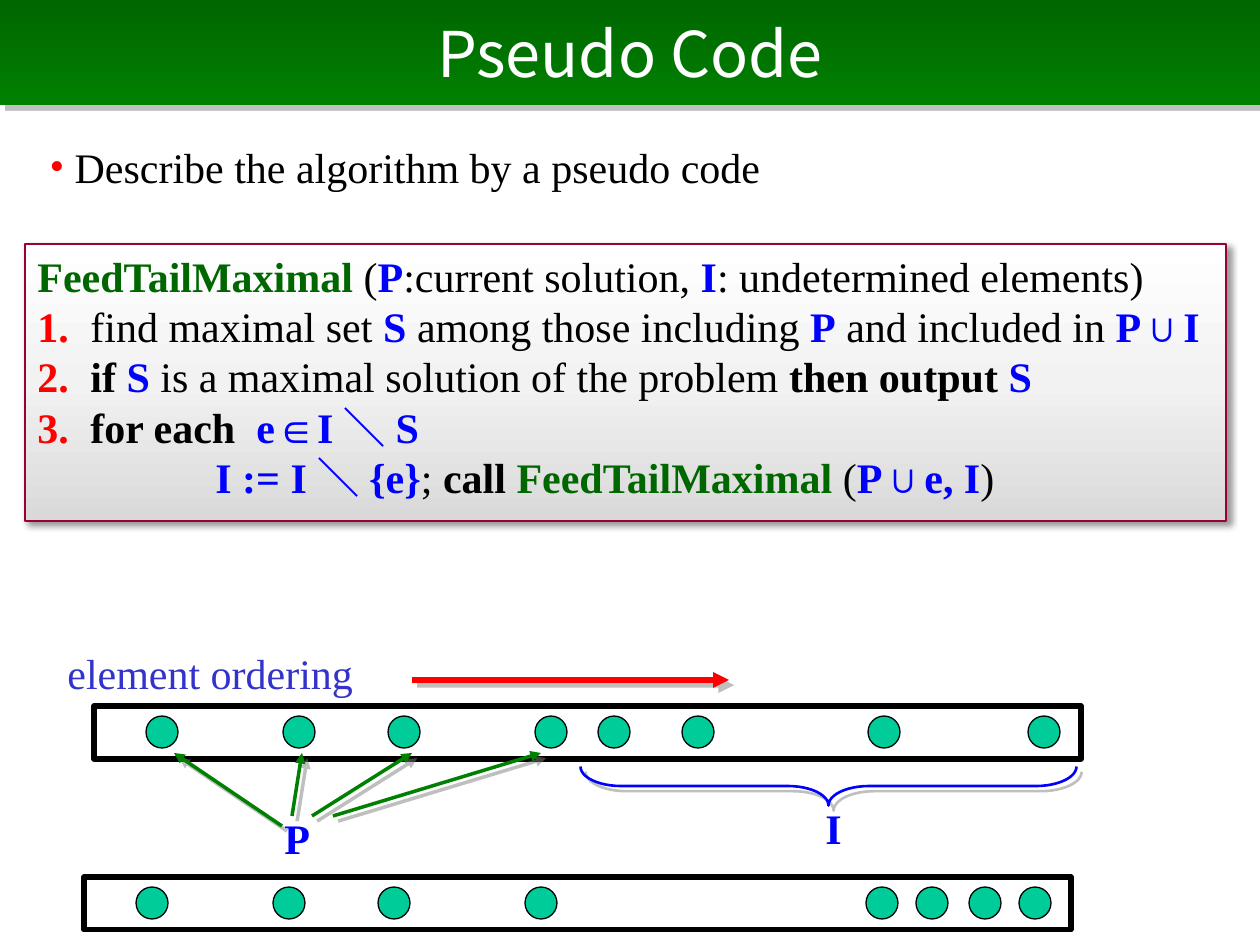
from copy import deepcopy

from lxml import etree
from pptx import Presentation
from pptx.dml.color import RGBColor
from pptx.enum.shapes import MSO_CONNECTOR, MSO_SHAPE
from pptx.enum.text import MSO_ANCHOR, MSO_AUTO_SIZE, PP_ALIGN
from pptx.oxml.ns import qn
from pptx.util import Emu, Pt

RECTANGLE, OVAL, BRACE = MSO_SHAPE.RECTANGLE, MSO_SHAPE.OVAL, MSO_SHAPE.LEFT_BRACE
STRAIGHT = MSO_CONNECTOR.STRAIGHT
TOP, MIDDLE = MSO_ANCHOR.TOP, MSO_ANCHOR.MIDDLE
LEFT, CENTER = PP_ALIGN.LEFT, PP_ALIGN.CENTER
NO_FIT, FIT_SHAPE = MSO_AUTO_SIZE.NONE, MSO_AUTO_SIZE.SHAPE_TO_FIT_TEXT

BLACK = RGBColor(0x00, 0x00, 0x00)
WHITE = RGBColor(0xFF, 0xFF, 0xFF)
PALE_GRAY = RGBColor(0xF2, 0xF2, 0xF2)
LIGHT_GRAY = RGBColor(0xD9, 0xD9, 0xD9)
GRAY = RGBColor(0x80, 0x80, 0x80)
DARK_GREEN = RGBColor(0x00, 0x66, 0x00)
GREEN = RGBColor(0x00, 0x80, 0x00)
TEAL = RGBColor(0x00, 0xCC, 0x99)
RED = RGBColor(0xFF, 0x00, 0x00)
MAROON = RGBColor(0x99, 0x00, 0x33)
BLUE = RGBColor(0x00, 0x00, 0xFF)
INDIGO = RGBColor(0x33, 0x33, 0xCC)

SERIF, SANS = "Times New Roman", "Noto Sans CJK JP"
BAR_WIDTH, BAR_HEIGHT, DOT_SIZE = 987, 53, 32

# Role of a piece of pseudo code: colour, bold
PLAIN, KEYWORD = (BLACK, False), (BLACK, True)
FUNCTION, VARIABLE, NUMBER = (DARK_GREEN, True), (BLUE, True), (RED, True)

# Each line: left margin, first-line indent, pieces
PSEUDO_CODE = [
    (0, 0, [("FeedTailMaximal ", FUNCTION), ("(", PLAIN), ("P", VARIABLE),
            (":current solution, ", PLAIN), ("I", VARIABLE),
            (": undetermined elements)", PLAIN)]),
    (53, -53, [("1.\t", NUMBER), ("find maximal set ", PLAIN), ("S ", VARIABLE),
               ("among those including ", PLAIN), ("P", VARIABLE),
               (" and included in ", PLAIN), ("P∪I", VARIABLE)]),
    (53, -53, [("2.\t", NUMBER), ("if ", KEYWORD), ("S ", VARIABLE),
               ("is a maximal solution of the problem ", PLAIN),
               ("then output ", KEYWORD), ("S", VARIABLE)]),
    (53, -53, [("3.\t", NUMBER), ("for each  ", KEYWORD), ("e∈I＼S", VARIABLE)]),
    (178, 0, [("I := I＼{e}", VARIABLE), ("; ", PLAIN), ("call ", KEYWORD),
              ("FeedTailMaximal ", FUNCTION), ("(", PLAIN),
              ("P∪e, I", VARIABLE), (")", PLAIN)]),
]


def px(length):
    return Emu(round(length * 914400 / 126))


def place(shape, left, top, width, height):
    shape.left, shape.top = px(left), px(top)
    shape.width, shape.height = px(width), px(height)


def set_font(font, color, size=24, name=SERIF, bold=False):
    font.name, font.size, font.bold = name, Pt(size), bold
    font.color.rgb = color


def set_indent(paragraph, margin, first_line):
    properties = paragraph._p.get_or_add_pPr()
    properties.set("marL", str(px(margin)))
    properties.set("indent", str(px(first_line)))
    return properties


def fill_downward(shape, *colors):
    """Fill with a vertical gradient of evenly spaced colours."""
    shape.fill.gradient()
    shape.fill.gradient_angle = 270
    stop_list = shape._element.spPr.find(".//" + qn("a:gsLst"))
    while len(stop_list) < len(colors):
        stop_list.append(deepcopy(stop_list[0]))
    for i, (stop, color) in enumerate(zip(shape.fill.gradient_stops, colors)):
        stop.color.rgb = color
        stop.position = i / (len(colors) - 1)


def cast_shadow(shape, color=GRAY, alpha=50, blur=0, distance=4.2):
    properties = shape._element.spPr
    effects = properties.find(qn("a:effectLst"))
    if effects is None:
        effects = etree.SubElement(properties, qn("a:effectLst"))
    shadow = etree.SubElement(
        effects, qn("a:outerShdw"), blurRad=str(Pt(blur)),
        dist=str(Pt(distance)), dir="2700000", algn="tl", rotWithShape="0")
    tint = etree.SubElement(shadow, qn("a:srgbClr"), val=str(color))
    etree.SubElement(tint, qn("a:alpha"), val=str(alpha * 1000))


def add_outline(slide, kind, box, color, width, fill=None):
    shape = slide.shapes.add_shape(kind, *map(px, box))
    shape.shadow.inherit = False
    if fill is None:
        shape.fill.background()
    else:
        shape.fill.solid()
        shape.fill.fore_color.rgb = fill
    shape.line.color.rgb = color
    shape.line.width = Pt(width)
    return shape


def add_arrow(slide, start, end, color, width):
    arrow = slide.shapes.add_connector(STRAIGHT, *map(px, start + end))
    arrow.line.color.rgb = color
    arrow.line.width = Pt(width)
    etree.SubElement(arrow.line._get_or_add_ln(), qn("a:tailEnd"), type="triangle")
    cast_shadow(arrow)


def add_label(slide, text, box, color, bold=False, wrap=False):
    frame = slide.shapes.add_textbox(*map(px, box)).text_frame
    frame.word_wrap = wrap
    frame.auto_size = FIT_SHAPE
    frame.text = text
    set_font(frame.paragraphs[0].font, color, bold=bold)


def add_element_row(slide, left, top, dot_offsets):
    """Draw a bar of elements, each dot given by its offset from the bar's left."""
    for offset in dot_offsets:
        add_outline(slide, OVAL, (left + offset, top + 10, DOT_SIZE, DOT_SIZE),
                    BLACK, 0.75, TEAL)
    add_outline(slide, RECTANGLE, (left, top, BAR_WIDTH, BAR_HEIGHT), BLACK, 3)


def fill_title(title):
    place(title, 0, 0, 1260, 105)
    fill_downward(title, DARK_GREEN, GREEN)
    cast_shadow(title)
    frame = title.text_frame
    frame.text = "Pseudo Code"
    frame.auto_size = NO_FIT
    frame.vertical_anchor = MIDDLE
    frame.paragraphs[0].alignment = CENTER
    set_font(frame.paragraphs[0].font, WHITE, 36, SANS)


def fill_summary(summary):
    place(summary, 37, 135, 1210, 139)
    frame = summary.text_frame
    frame.text = "Describe the algorithm by a pseudo code"
    frame.auto_size = NO_FIT
    frame.vertical_anchor = TOP
    paragraph = frame.paragraphs[0]
    paragraph.alignment = LEFT
    bullet = set_indent(paragraph, 25, -25)
    bullet_color = etree.SubElement(bullet, qn("a:buClr"))
    etree.SubElement(bullet_color, qn("a:srgbClr"), val=str(RED))
    etree.SubElement(bullet, qn("a:buFont"), typeface=SERIF)
    etree.SubElement(bullet, qn("a:buChar"), char="•")
    set_font(paragraph.font, BLACK)


def add_pseudo_code(slide):
    panel = add_outline(slide, RECTANGLE, (25, 244, 1201, 277), MAROON, 1.5)
    fill_downward(panel, WHITE, PALE_GRAY, LIGHT_GRAY)
    cast_shadow(panel, BLACK, 40, 4, 3)
    frame = panel.text_frame
    frame.vertical_anchor = TOP
    for i, (margin, first_line, pieces) in enumerate(PSEUDO_CODE):
        paragraph = frame.add_paragraph() if i else frame.paragraphs[0]
        paragraph.alignment = LEFT
        paragraph.line_spacing = Pt(28.8)
        set_indent(paragraph, margin, first_line)
        for text, (color, bold) in pieces:
            run = paragraph.add_run()
            run.text = text
            set_font(run.font, color, bold=bold)


def add_ordering_diagram(slide):
    add_arrow(slide, (412, 680), (729, 680), RED, 3)
    add_label(slide, "element ordering", (55, 641, 347, 64), INDIGO, wrap=True)
    solution = [52, 189, 294, 441]
    add_element_row(slide, 94, 706, solution + [504, 588, 774, 934])
    for start, end in [((292, 816), (302, 753)), ((282, 826), (174, 753)),
                       ((312, 816), (412, 753)), ((333, 816), (541, 753))]:
        add_arrow(slide, start, end, GREEN, 2)
    add_label(slide, "P", (272, 806, 50, 64), BLUE, bold=True)

    brace = add_outline(slide, BRACE, (809, 538, 39, 496), BLUE, 1.5)
    brace.rotation = 270
    brace.adjustments[0] = 1.04
    cast_shadow(brace)
    add_label(slide, "I", (813, 796, 42, 64), BLUE, bold=True)
    add_element_row(slide, 84, 877, solution + [782, 832, 885, 935])


def main():
    presentation = Presentation()
    presentation.slide_width, presentation.slide_height = px(1260), px(945)
    slide = presentation.slides.add_slide(presentation.slide_layouts[0])
    fill_title(slide.shapes.title)
    fill_summary(slide.placeholders[1])
    add_ordering_diagram(slide)
    add_pseudo_code(slide)
    presentation.save("out.pptx")


if __name__ == "__main__":
    main()
